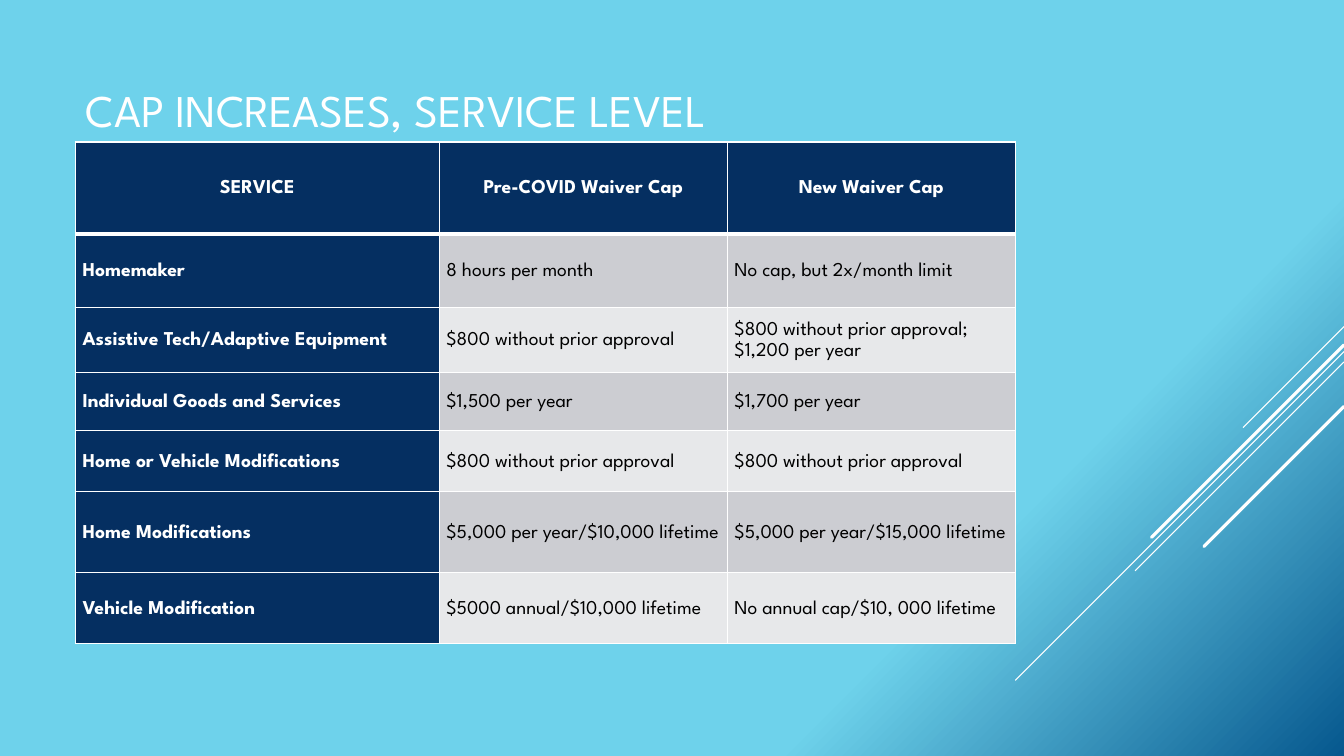
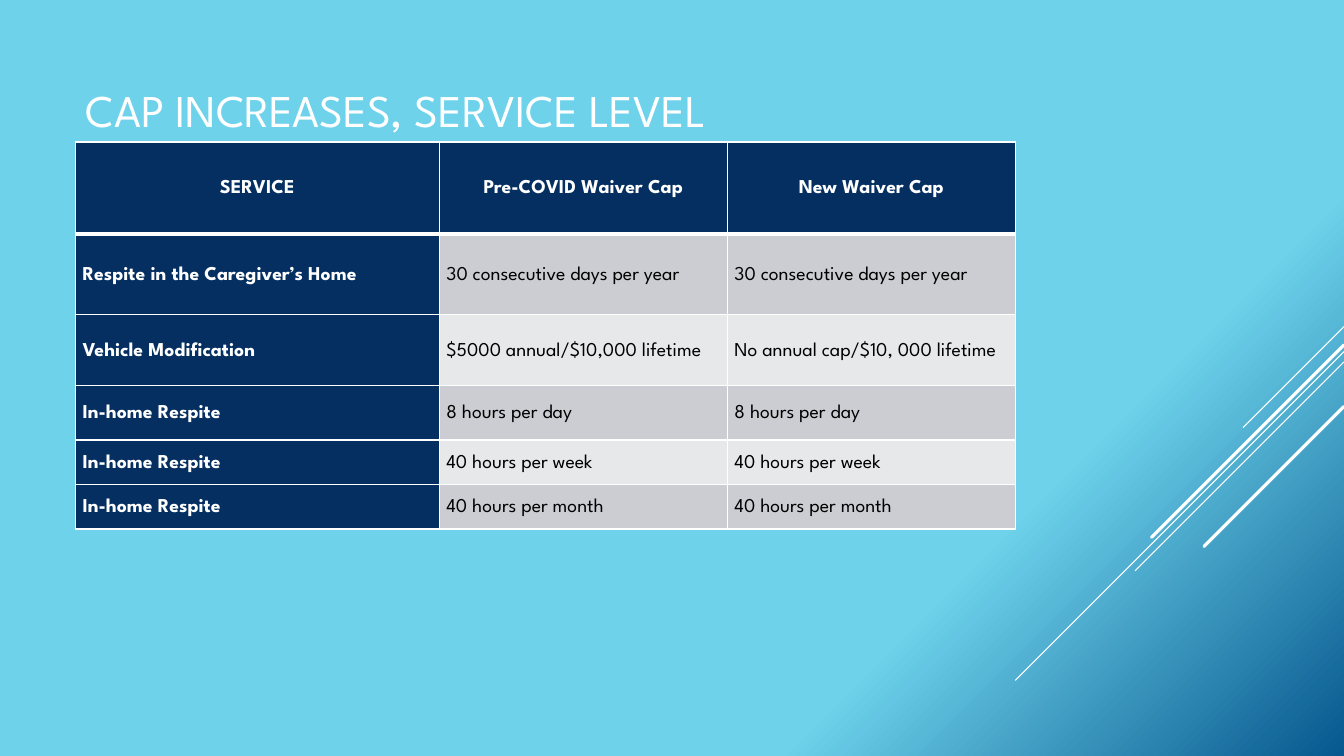
from lxml import etree
from pptx import Presentation
from pptx.dml.color import RGBColor
from pptx.enum import shapes, text
from pptx.oxml.ns import qn
from pptx.util import Cm, Pt

FONT = "League Spartan"
WHITE, BLACK, NAVY = "FFFFFF", "000000", "052F61"
SKY, DEEP_BLUE = "6ED2EB", "06588E"
BANDS = ["CCCDD2", "E7E8EA"]

PAGE_WIDTH, PAGE_HEIGHT = 33.87, 19.05
LEFT, TITLE_TOP, TABLE_TOP = 1.9, 2.0, 3.58
COLUMN_WIDTHS = [9.17, 7.26, 7.26]
HEADER_HEIGHT = 2.31
THIN, THICK = 1, 3

# Diagonal rays: height at the right edge, horizontal run, line width
RAYS = [(8.23, 2.54, 0.75), (8.86, 8.28, 0.75), (9.12, 5.26, 0.75),
        (8.69, 4.85, 2.25), (10.24, 3.53, 2.25)]

TITLE = "CAP INCREASES, SERVICE LEVEL"
HEADER = ["SERVICE", "Pre-COVID Waiver Cap", "New Waiver Cap"]
VEHICLE = (1.8, "Vehicle Modification", "$5000 annual/$10,000 lifetime",
           "No annual cap/$10, 000 lifetime")
# Each row: height, service, old cap, new cap
PAGES = [
    [
        (1.85, "Homemaker", "8 hours per month", "No cap, but 2x/month limit"),
        (1.65, "Assistive Tech/Adaptive Equipment", "$800 without prior approval",
         "$800 without prior approval; $1,200 per year"),
        (1.45, "Individual Goods and Services", "$1,500 per year", "$1,700 per year"),
        (1.55, "Home or Vehicle Modifications", "$800 without prior approval",
         "$800 without prior approval"),
        (2.03, "Home Modifications", "$5,000 per year/$10,000 lifetime",
         "$5,000 per year/$15,000 lifetime"),
        VEHICLE,
    ],
    [
        (2.03, "Respite in the Caregiver’s Home", "30 consecutive days per year",
         "30 consecutive days per year"),
        VEHICLE,
        (1.37, "In-home Respite", "8 hours per day", "8 hours per day"),
        (1.12, "In-home Respite", "40 hours per week", "40 hours per week"),
        (1.12, "In-home Respite", "40 hours per month", "40 hours per month"),
    ],
]


def color(hex_code):
    return RGBColor.from_string(hex_code)


def set_format(target, values):
    for name, value in values.items():
        setattr(target, name, value)


def write(para, words, size, hex_code, bold=False):
    span = para.add_run()
    span.text = words
    set_format(span.font, {"name": FONT, "size": Pt(size), "bold": bold})
    span.font.color.rgb = color(hex_code)


def paint_background(master):
    fill = master.background.fill
    fill.gradient()
    fill.gradient_angle = 315
    for stop, position, hex_code in zip(fill.gradient_stops, (0.73, 1), (SKY, DEEP_BLUE)):
        stop.position = position
        stop.color.rgb = color(hex_code)


def add_rays(page, master):
    """Draw the diagonal lines and move them to the master."""
    for top, run, width in RAYS:
        ray = page.shapes.add_connector(
            shapes.MSO_CONNECTOR.STRAIGHT, Cm(PAGE_WIDTH), Cm(top),
            Cm(PAGE_WIDTH - run), Cm(top + run))
        ray.line.color.rgb = color(WHITE)
        ray.line.width = Pt(width)
        properties = ray.element.spPr
        properties.find(qn("a:ln")).set("cap", "rnd")
        etree.SubElement(properties, qn("a:effectLst"))
        master.element.cSld.spTree.append(ray.element)


def add_title(page, words):
    box = page.shapes.title
    set_format(box, {"left": Cm(LEFT), "top": Cm(TITLE_TOP),
                     "width": Cm(sum(COLUMN_WIDTHS)), "height": Cm(TABLE_TOP - TITLE_TOP)})
    set_format(box.text_frame, {"vertical_anchor": text.MSO_ANCHOR.BOTTOM,
                                "auto_size": text.MSO_AUTO_SIZE.NONE, "word_wrap": True})
    para = box.text_frame.paragraphs[0]
    para.alignment = text.PP_ALIGN.LEFT
    write(para, words, 32.4, WHITE)


def add_borders(cell, widths):
    """Give the cell white edges; widths maps a side letter to points."""
    properties = cell._tc.get_or_add_tcPr()
    for side, width in widths.items():
        edge = etree.SubElement(properties, qn(f"a:ln{side}"), w=str(Pt(width)))
        fill = etree.SubElement(edge, qn("a:solidFill"))
        etree.SubElement(fill, qn("a:srgbClr"), val=WHITE)


def fill_cell(cell, words, row, column):
    is_header = row == 0
    is_label = is_header or column == 0
    add_borders(cell, {"L": THIN, "R": THIN, "T": THICK if row == 1 else THIN,
                       "B": THICK if is_header else THIN})
    cell.fill.solid()
    cell.fill.fore_color.rgb = color(NAVY if is_label else BANDS[(row - 1) % 2])
    set_format(cell, {"vertical_anchor": text.MSO_ANCHOR.MIDDLE,
                      "margin_left": Cm(0.18), "margin_right": Cm(0.18),
                      "margin_top": 0, "margin_bottom": 0})
    para = cell.text_frame.paragraphs[0]
    set_format(para, {"line_spacing": 1.15, "alignment":
                      text.PP_ALIGN.CENTER if is_header else text.PP_ALIGN.LEFT})
    write(para, words, 14, WHITE if is_label else BLACK, is_label)


def add_cap_table(page, services):
    rows = [(HEADER_HEIGHT, *HEADER), *services]
    table = page.shapes.add_table(
        len(rows), len(HEADER), Cm(LEFT), Cm(TABLE_TOP), Cm(sum(COLUMN_WIDTHS)),
        Cm(sum(row[0] for row in rows))).table
    for column, width in zip(table.columns, COLUMN_WIDTHS):
        column.width = Cm(width)
    for row, (height, *entries) in enumerate(rows):
        table.rows[row].height = Cm(height)
        for column, words in enumerate(entries):
            fill_cell(table.cell(row, column), words, row, column)


def main():
    deck = Presentation()
    set_format(deck, {"slide_width": Cm(PAGE_WIDTH), "slide_height": Cm(PAGE_HEIGHT)})
    paint_background(deck.slide_master)
    title_only = deck.slide_layouts.get_by_name("Title Only")
    for services in PAGES:
        page = deck.slides.add_slide(title_only)
        add_title(page, TITLE)
        add_cap_table(page, services)
    add_rays(page, deck.slide_master)
    deck.save("out.pptx")


if __name__ == "__main__":
    main()
